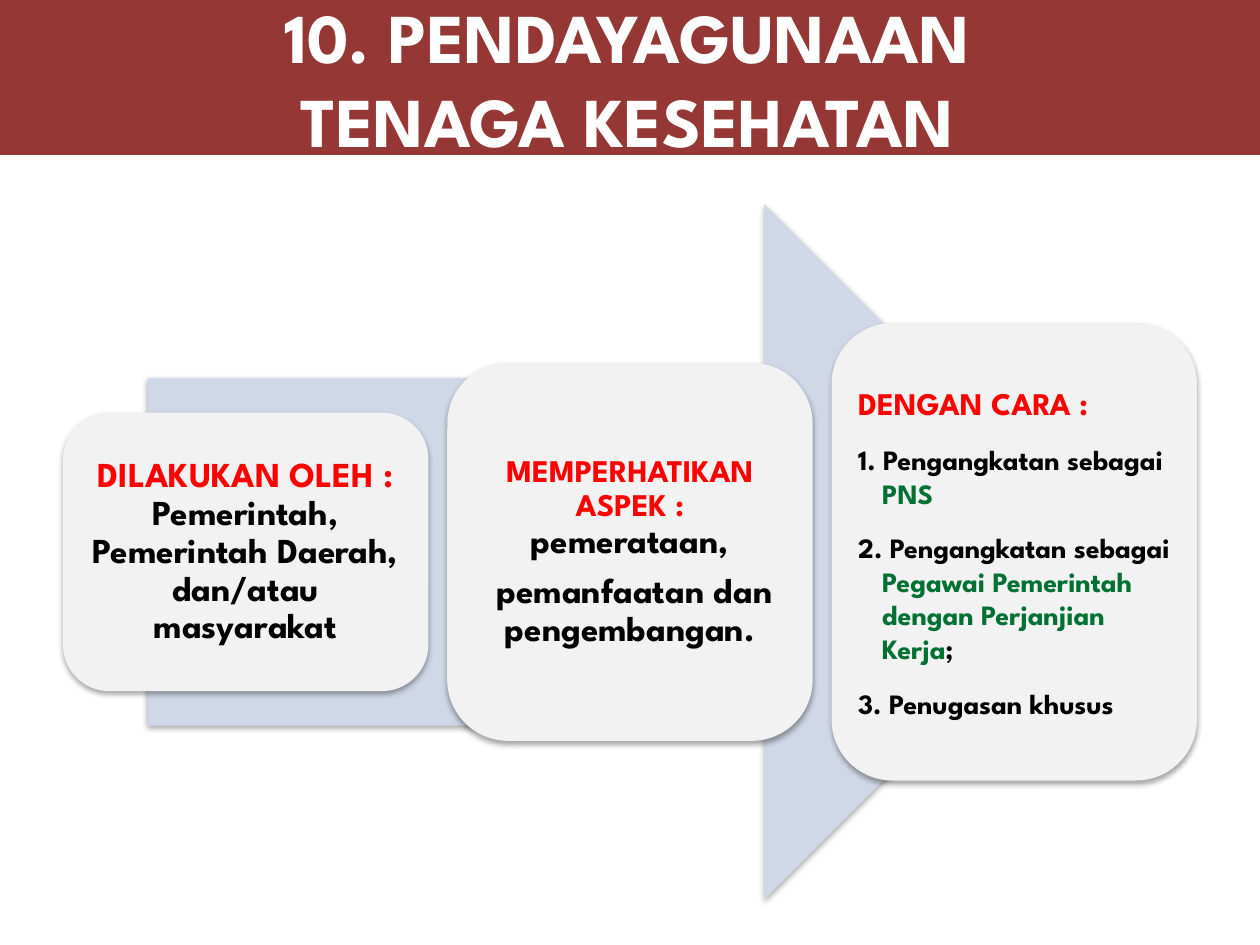
from lxml import etree
from pptx import Presentation
from pptx.dml.color import RGBColor
from pptx.enum.shapes import MSO_SHAPE
from pptx.enum.text import MSO_ANCHOR, PP_ALIGN
from pptx.oxml.ns import qn
from pptx.util import Inches, Pt

RECTANGLE = MSO_SHAPE.RECTANGLE
ROUNDED = MSO_SHAPE.ROUNDED_RECTANGLE
ARROW = MSO_SHAPE.RIGHT_ARROW
MIDDLE = MSO_ANCHOR.MIDDLE
LEFT, CENTER = PP_ALIGN.LEFT, PP_ALIGN.CENTER

FONT = "League Spartan"
RED, GREEN, BLACK, WHITE = "FF0000", "007033", "000000", "FFFFFF"
MAROON, PALE_BLUE, PALE_GREY = "953735", "D0D8E8", "F2F2F2"

CARD_FORMAT = {"alignment": CENTER, "line_spacing": 0.9, "space_after": Pt(7)}
LIST_FORMAT = {"alignment": LEFT, "space_after": Pt(12)}

# Each paragraph: hanging indent in inches, then spans of (text, size, colour)
CARDS = [
    (2.21, 0.08, CARD_FORMAT, [
        (0, [("DILAKUKAN OLEH : ", 20, RED),
             ("Pemerintah, Pemerintah Daerah, dan/atau masyarakat", 20, BLACK)]),
    ]),
    (3.0, 0.07, CARD_FORMAT, [
        (0, [("MEMPERHATIKAN ASPEK : ", 18, RED), ("pemerataan,", 20, BLACK)]),
        (0, [(" pemanfaatan dan pengembangan.", 20, BLACK)]),
    ]),
    (3.63, 0.07, LIST_FORMAT, [
        (0.39, [("DENGAN CARA :", 18, RED)]),
        (0.19, [("1. Pengangkatan sebagai ", 16, BLACK), ("PNS", 16, GREEN)]),
        (0.19, [("2. Pengangkatan sebagai ", 16, BLACK),
                ("Pegawai Pemerintah  dengan Perjanjian Kerja", 16, GREEN),
                (";", 16, BLACK)]),
        (0.39, [("3. Penugasan khusus", 16, BLACK)]),
    ]),
]


def color(hex_value):
    return RGBColor.from_string(hex_value)


def add_soft_shadow(shape):
    shape.shadow.inherit = False
    effects = shape._element.spPr.find(qn("a:effectLst"))
    shadow = etree.SubElement(effects, qn("a:outerShdw"), blurRad=str(Pt(3.1)),
                              dist=str(Pt(1.8)), dir="5400000", rotWithShape="0")
    tint = etree.SubElement(shadow, qn("a:srgbClr"), val=BLACK)
    etree.SubElement(tint, qn("a:alpha"), val="35000")


def add_filled_shape(page, kind, box, fill):
    shape = page.shapes.add_shape(kind, *(Inches(value) for value in box))
    shape.shadow.inherit = False
    shape.fill.solid()
    shape.fill.fore_color.rgb = color(fill)
    shape.line.fill.background()
    return shape


def write_paragraphs(shape, paragraphs, formats):
    frame = shape.text_frame
    frame.word_wrap = True
    frame.vertical_anchor = MIDDLE
    for index, (indent, spans) in enumerate(paragraphs):
        para = frame.add_paragraph() if index else frame.paragraphs[0]
        for name, value in formats.items():
            setattr(para, name, value)
        if indent:
            properties = para._p.get_or_add_pPr()
            properties.set("marL", str(Inches(indent)))
            properties.set("indent", str(-Inches(indent)))
        for text, size, hex_value in spans:
            span = para.add_run()
            span.text = text
            for name, value in {"name": FONT, "size": Pt(size), "bold": True}.items():
                setattr(span.font, name, value)
            span.font.color.rgb = color(hex_value)


def add_title_band(page, box):
    band = add_filled_shape(page, RECTANGLE, box, MAROON)
    lines = ["10. PENDAYAGUNAAN", "TENAGA KESEHATAN"]
    write_paragraphs(band, [(0, [(line, 40, WHITE)]) for line in lines],
                     {"alignment": CENTER})


def add_card(page, box, inset, formats, paragraphs):
    card = add_filled_shape(page, ROUNDED, box, PALE_GREY)
    add_soft_shadow(card)
    for side in ("left", "top", "right", "bottom"):
        setattr(card.text_frame, f"margin_{side}", Inches(inset))
    write_paragraphs(card, paragraphs, formats)


def add_process(page, box):
    """Arrow behind a row of cards, all centred on the same horizontal axis."""
    left, top, width, height = box
    arrow_width = 0.85 * width
    arrow_box = (left + (width - arrow_width) / 2, top, arrow_width, height)
    add_soft_shadow(add_filled_shape(page, ARROW, arrow_box, PALE_BLUE))

    card_width = 2.9
    gap = (width - len(CARDS) * card_width) / (len(CARDS) - 1)
    for index, (card_height, inset, formats, paragraphs) in enumerate(CARDS):
        card_box = (left + index * (card_width + gap),
                    top + (height - card_height) / 2, card_width, card_height)
        add_card(page, card_box, inset, formats, paragraphs)


def main():
    deck = Presentation()
    deck.slide_width, deck.slide_height = Inches(10), Inches(7.5)
    page = deck.slides.add_slide(deck.slide_layouts[6])
    add_process(page, (0.5, 1.62, 9, 5.52))
    add_title_band(page, (-0.04, 0, 10.04, 1.23))
    deck.save("out.pptx")


if __name__ == "__main__":
    main()
